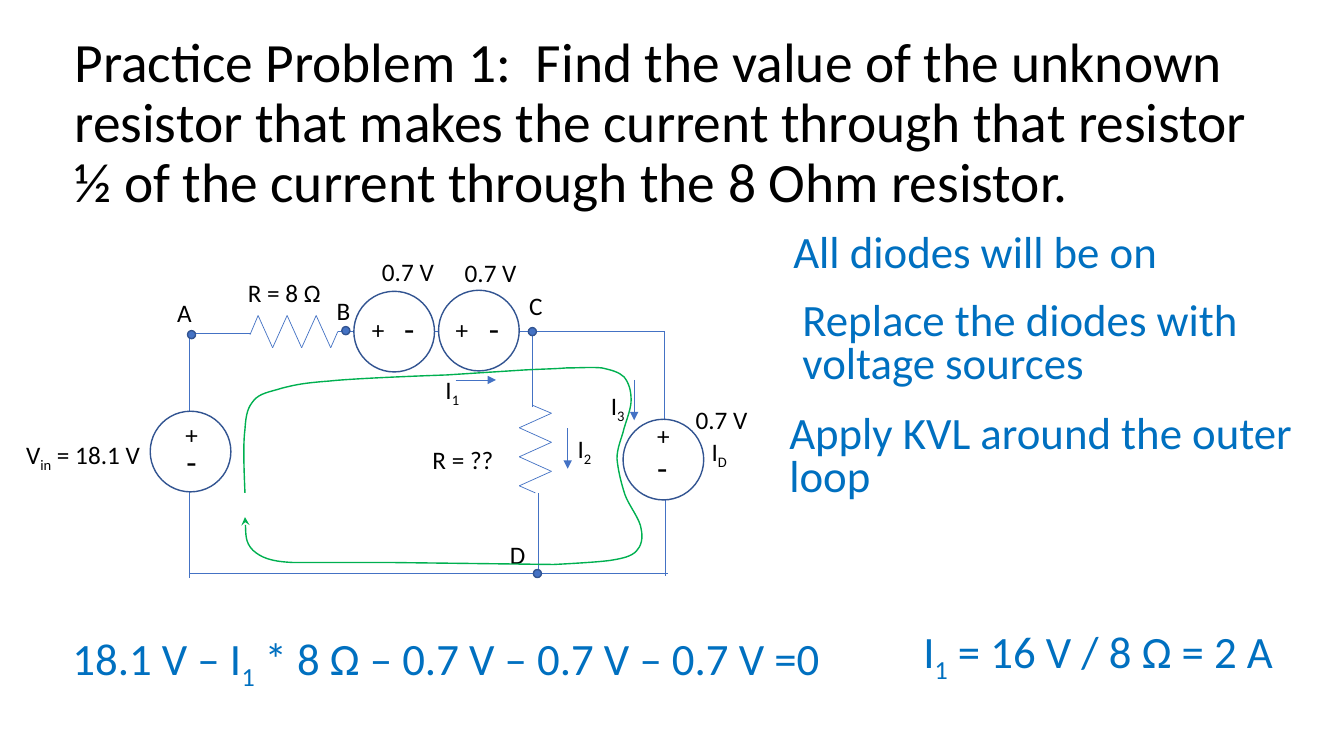
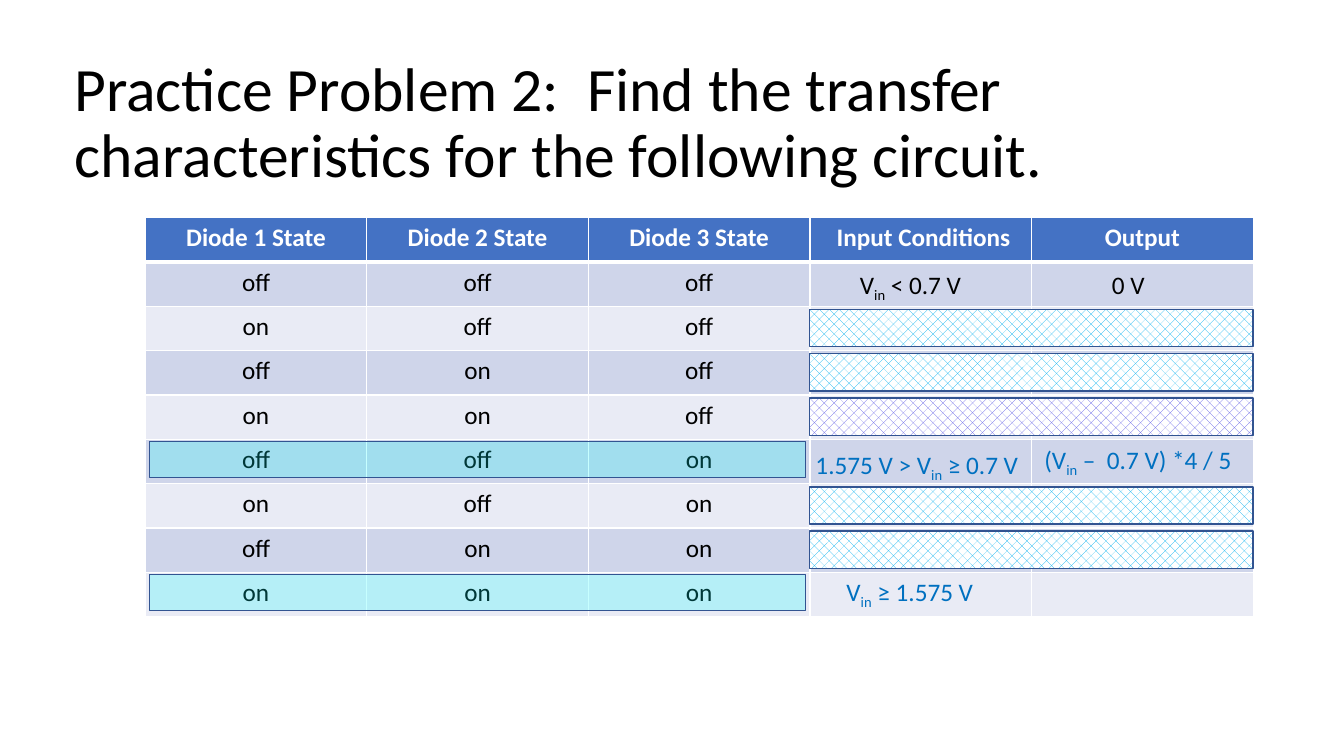
from itertools import pairwise, product

from lxml import etree
from pptx import Presentation
from pptx.dml.color import RGBColor
from pptx.enum import dml, shapes, text
from pptx.oxml import ns
from pptx.util import Inches, Pt

# Shared style
FONT = "Calibri"
BLACK, WHITE, ANSWER = "000000", "FFFFFF", "0070C0"
ACCENT, OUTLINE, LOOP = "4472C4", "325491", "00B050"
HATCH, HATCH_ALT, HIGHLIGHT = "00B0F0", "5B58E6", "00FFFF"
ROW_FILLS = ("CFD5EA", "E9EBF5")
SOURCE_SIZE, DOT_SIZE = 0.8, 0.08

# Table grid
TABLE_LEFT, TABLE_TOP = 1.44, 2.16
TABLE_WIDTH, ROW_HEIGHT = 10.99, 0.44
HEADINGS = ("Diode 1 State", "Diode 2 State", "Diode 3 State",
            " Input Conditions", "Output")

# Circuit on the first slide: wires, current arrows and labels
WIRES = [
    (1.88, 3.3, 1.88, 4.08), (1.88, 4.88, 1.88, 5.73),
    (1.88, 3.31, 2.48, 3.31), (3.35, 3.29, 6.6, 3.29),
    (6.59, 3.29, 6.59, 4.29), (6.6, 4.72, 6.6, 5.71),
    (5.28, 4.04, 5.28, 3.26), (5.34, 5.69, 5.34, 4.89),
    (1.88, 5.69, 6.63, 5.69),
]
CURRENTS = [
    (4.52, 3.77, 4.92, 3.77), (5.63, 4.25, 5.63, 4.65),
    (6.29, 3.77, 6.29, 4.17),
]
NODES = [(1.86, 3.28), (3.39, 3.24), (5.24, 3.25), (5.29, 5.65)]
CIRCUIT_LABELS = [
    ("V_in_ = 18.1 V", 0.16, 4.31, 1.37), ("R = 8 Ω", 2.36, 2.7, 1.18),
    ("R = ??", 4.19, 4.36, 1.18), ("I_D_", 6.96, 4.28, 0.37),
    ("I_1_", 4.32, 3.66, 0.43), ("I_2_", 5.63, 4.25, 0.37),
    ("I_3_", 5.96, 3.82, 0.43),
    ("A", 1.66, 2.9, 0.43), ("B", 3.24, 2.88, 0.43),
    ("C", 5.15, 2.83, 0.43), ("D", 4.96, 5.3, 0.43),
    ("0.7 V", 3.69, 2.49, 0.72), ("0.7 V", 4.51, 2.5, 0.72),
    ("0.7 V", 6.8, 3.96, 0.72),
]
# Circle corner, then offsets of the plus and minus signs from it
SOURCES = [
    (1.49, 4.08, (0.25, 0.03), (0.26, 0.25)),
    (6.18, 4.16, (0.24, -0.04), (0.24, 0.22)),
    (4.35, 2.88, (0.07, 0.19), (0.4, 0.13)),
    (3.51, 2.89, (0.08, 0.18), (0.4, 0.12)),
]
# Loop outline: two numbers make a straight step, six a Bezier step
LOOP_START = (2.43, 4.89)
LOOP_STEPS = [
    (2.42, 4.65, 2.41, 4.41, 2.43, 4.26), (2.44, 4.1, 2.46, 4.04, 2.52, 3.97),
    (2.58, 3.9, 2.67, 3.89, 2.8, 3.85), (2.92, 3.82, 3, 3.8, 3.27, 3.78),
    (3.54, 3.75, 4.43, 3.72, 4.43, 3.72), (5.21, 3.67),
    (5.41, 3.66, 5.49, 3.66, 5.62, 3.65), (5.75, 3.65, 5.87, 3.64, 5.97, 3.65),
    (6.06, 3.67, 6.14, 3.69, 6.19, 3.74), (6.24, 3.8, 6.26, 3.88, 6.26, 3.97),
    (6.26, 4.05, 6.22, 4.15, 6.19, 4.25), (6.17, 4.34, 6.12, 4.44, 6.12, 4.55),
    (6.13, 4.66, 6.16, 4.79, 6.2, 4.91), (6.24, 5.02, 6.35, 5.15, 6.36, 5.25),
    (6.38, 5.34, 6.36, 5.42, 6.31, 5.47), (6.26, 5.52, 6.18, 5.54, 6.05, 5.56),
    (5.91, 5.58, 5.49, 5.6, 5.49, 5.6), (3.84, 5.58), (2.9, 5.58),
    (2.68, 5.57, 2.59, 5.53, 2.51, 5.46), (2.43, 5.38, 2.44, 5.24, 2.43, 5.13),
]


def rgb(value):
    return RGBColor.from_string(value)


def style_font(font, size, color, bold=False):
    font.name, font.size, font.bold = FONT, Pt(size), bold
    font.color.rgb = rgb(color)


def style_line(item, color, width, arrow=None):
    item.line.color.rgb = rgb(color)
    item.line.width = Pt(width)
    if arrow:
        outline = item._element.spPr.get_or_add_ln()
        etree.SubElement(outline, ns.qn("a:tailEnd"), type=arrow)


# Text; a part between underscores is a subscript
def add_text(slide, words, left, top, width, height=0.4, size=18,
             color=BLACK, spacing=None):
    box = slide.shapes.add_textbox(*map(Inches, (left, top, width, height)))
    frame = box.text_frame
    frame.word_wrap = True
    para = frame.paragraphs[0]
    if spacing:
        frame.vertical_anchor = text.MSO_ANCHOR.MIDDLE
        para.line_spacing = spacing
    for index, part in enumerate(words.split("_")):
        if not part:
            continue
        span = para.add_run()
        span.text = part
        style_font(span.font, size, color)
        if index % 2:
            span._r.get_or_add_rPr().set("baseline", "-25000")


def add_title(slide, words, size):
    add_text(slide, words, 0.64, 0.51, 12.06, 1.45, size, spacing=0.9)


def add_answer(slide, words, left, top, width, height=1.05, spacing=0.9):
    add_text(slide, words, left, top, width, height, 32, ANSWER, spacing)


# Shapes and lines
def add_outlined(slide, kind, left, top, width, height):
    shape = slide.shapes.add_shape(
        kind, *map(Inches, (left, top, width, height)))
    shape.shadow.inherit = False
    style_line(shape, OUTLINE, 1)
    return shape


def add_circle(slide, left, top, size, fill):
    circle = add_outlined(slide, shapes.MSO_SHAPE.OVAL, left, top, size, size)
    circle.fill.solid()
    circle.fill.fore_color.rgb = rgb(fill)


def add_wire(slide, ends, arrow=None):
    wire = slide.shapes.add_connector(
        shapes.MSO_CONNECTOR.STRAIGHT, *map(Inches, ends))
    style_line(wire, ACCENT, 0.5, arrow)
    etree.SubElement(wire._element.spPr, ns.qn("a:effectLst"))


def add_resistor(slide, points):
    for start, end in pairwise(points):
        add_wire(slide, start + end)


def zigzag(first, last, sides):
    """Six evenly spaced peaks as (distance along, alternating side)."""
    return [(first + (last - first) * i / 5, sides[i % 2]) for i in range(6)]


def add_source(slide, left, top, plus, minus):
    add_circle(slide, left, top, SOURCE_SIZE, WHITE)
    add_text(slide, "+", left + plus[0], top + plus[1], 0.36)
    add_text(slide, "-", left + minus[0], top + minus[1], 0.36, 0.5, 24)


def add_loop(slide):
    builder = slide.shapes.build_freeform(*map(Inches, LOOP_START))
    builder.add_line_segments(
        [tuple(map(Inches, step[-2:])) for step in LOOP_STEPS], close=False)
    loop = builder.convert_to_shape()
    loop.shadow.inherit = False
    loop.fill.background()
    style_line(loop, LOOP, 1, "stealth")
    # Bend the straight steps that have control points
    straights = list(loop._element.iter(ns.qn("a:lnTo")))
    for straight, step in zip(straights, LOOP_STEPS):
        if len(step) == 2:
            continue
        straight.tag = ns.qn("a:cubicBezTo")
        straight.remove(straight[0])
        for x, y in zip(step[::2], step[1::2]):
            etree.SubElement(straight, ns.qn("a:pt"),
                             x=str(Inches(x) - loop.left),
                             y=str(Inches(y) - loop.top))


# Table parts
def row_top(row):
    return TABLE_TOP + row * ROW_HEIGHT


def set_borders(cell, top, bottom):
    properties = cell._tc.get_or_add_tcPr()
    widths = {"a:lnL": 1, "a:lnR": 1, "a:lnT": top, "a:lnB": bottom}
    for index, (side, width) in enumerate(widths.items()):
        border = etree.Element(ns.qn(side), w=str(Pt(width)))
        fill = etree.SubElement(border, ns.qn("a:solidFill"))
        etree.SubElement(fill, ns.qn("a:srgbClr"), val=WHITE)
        properties.insert(index, border)


def add_state_table(slide):
    rows = [HEADINGS] + [states[::-1] + ("", "")
                         for states in product(("off", "on"), repeat=3)]
    table = slide.shapes.add_table(
        len(rows), len(HEADINGS), Inches(TABLE_LEFT), Inches(TABLE_TOP),
        Inches(TABLE_WIDTH), Inches(ROW_HEIGHT * len(rows))).table
    for row, words in enumerate(rows):
        header = row == 0
        fill = ACCENT if header else ROW_FILLS[(row - 1) % 2]
        for column, word in enumerate(words):
            cell = table.cell(row, column)
            cell.fill.solid()
            cell.fill.fore_color.rgb = rgb(fill)
            set_borders(cell, 3 if row == 1 else 1, 3 if header else 1)
            para = cell.text_frame.paragraphs[0]
            para.text = word
            para.alignment = text.PP_ALIGN.CENTER
            for span in para.runs:
                style_font(span.font, 18, WHITE if header else BLACK, header)


def add_hatched_band(slide, row, color):
    band = add_outlined(slide, shapes.MSO_SHAPE.RECTANGLE,
                        8.03, row_top(row) + 0.03, 4.4, 0.37)
    band.fill.patterned()
    band.fill.pattern = dml.MSO_PATTERN.PERCENT_30
    band.fill.fore_color.rgb = rgb(color)
    band.fill.back_color.rgb = rgb(WHITE)


def add_highlight(slide, row):
    band = add_outlined(slide, shapes.MSO_SHAPE.RECTANGLE,
                        1.48, row_top(row) + 0.02, 6.51, 0.36)
    band.fill.solid()
    band.fill.fore_color.rgb = rgb(HIGHLIGHT)
    color = band._element.spPr.find(".//" + ns.qn("a:srgbClr"))
    etree.SubElement(color, ns.qn("a:alpha"), val="22000")


# Slides
def build_resistor_problem(slide):
    add_title(slide, "Practice Problem 1:  Find the value of the unknown "
              "resistor that makes the current through that resistor ½ of "
              "the current through the 8 Ohm resistor.", 39.6)
    for ends in WIRES:
        add_wire(slide, ends)
    across = zigzag(2.56, 3.28, (3.13, 3.45))
    add_resistor(slide, [(2.48, 3.32), *across, (3.35, 3.29)])
    down = [(x, y) for y, x in zigzag(4.1, 4.82, (5.47, 5.15))]
    add_resistor(slide, [(5.28, 4.02), *down, (5.31, 4.89)])
    for ends in CURRENTS:
        add_wire(slide, ends, "triangle")
    for left, top in NODES:
        add_circle(slide, left, top, DOT_SIZE, ACCENT)
    for source in SOURCES:
        add_source(slide, *source)
    for label in CIRCUIT_LABELS:
        add_text(slide, *label)
    add_loop(slide)

    # Solution steps
    add_answer(slide, "All diodes will be on", 7.77, 2.14, 5.13, 0.76)
    add_answer(slide, "Replace the diodes with voltage sources",
               7.86, 2.9, 5.09, spacing=0.8)
    add_answer(slide, "Apply KVL around the outer loop",
               7.73, 4.02, 5.2, spacing=0.8)
    add_answer(slide, "18.1 V – I_1_ * 8 Ω – 0.7 V – 0.7 V – 0.7 V =0",
               0.62, 6.01, 7.83)
    add_answer(slide, " I_1_ = 16 V / 8 Ω = 2 A", 8.96, 5.94, 3.99)


def build_transfer_problem(slide):
    add_title(slide, "Practice Problem 2:  Find the transfer characteristics "
              "for the following circuit.", 44)
    add_state_table(slide)
    for row in (2, 3, 4, 6, 7):
        add_hatched_band(slide, row, HATCH_ALT if row == 4 else HATCH)
    for row in (5, 8):
        add_highlight(slide, row)
    add_text(slide, "V_in_ < 0.7 V", 8.43, 2.62, 1.39)
    add_text(slide, "0 V", 10.93, 2.62, 0.96)
    for words, left, top, width in (
            ("1.575 V > V_in_ ≥ 0.7 V", 7.99, 4.41, 2.27),
            ("(V_in_ –  0.7 V) *4 / 5", 10.26, 4.36, 2.1),
            (" V_in_ ≥ 1.575 V", 8.24, 5.67, 1.77)):
        add_text(slide, words, left, top, width, color=ANSWER)


def main():
    deck = Presentation()
    deck.slide_width, deck.slide_height = Inches(13.33), Inches(7.5)
    for build in (build_resistor_problem, build_transfer_problem):
        build(deck.slides.add_slide(deck.slide_layouts[6]))
    deck.save("out.pptx")


if __name__ == "__main__":
    main()
